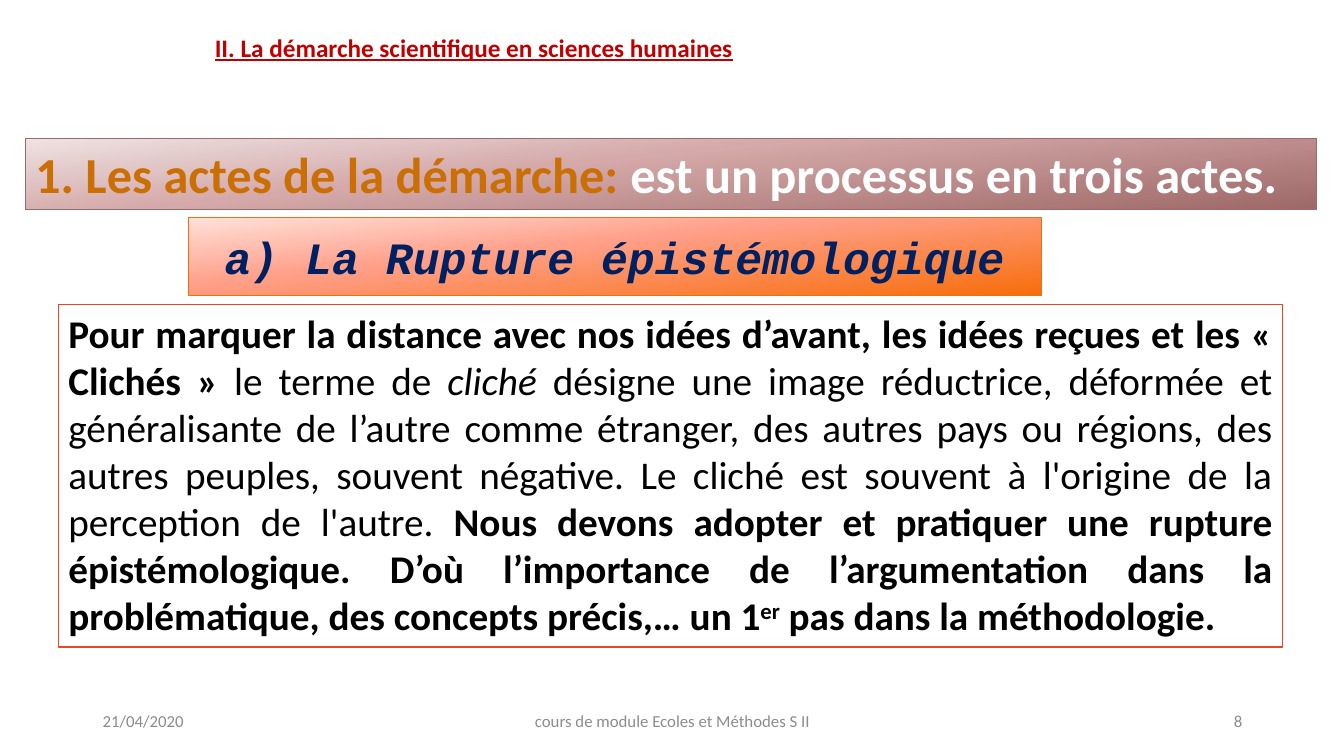
from dataclasses import dataclass

from lxml import etree
from pptx import Presentation
from pptx.dml.color import RGBColor
from pptx.enum.shapes import MSO_SHAPE
from pptx.enum.text import MSO_ANCHOR, MSO_AUTO_SIZE, PP_ALIGN
from pptx.oxml.ns import qn
from pptx.util import Inches, Pt

RECTANGLE = MSO_SHAPE.RECTANGLE
TOP, MIDDLE = MSO_ANCHOR.TOP, MSO_ANCHOR.MIDDLE
LEFT, CENTER, RIGHT, JUSTIFY = PP_ALIGN.LEFT, PP_ALIGN.CENTER, PP_ALIGN.RIGHT, PP_ALIGN.JUSTIFY
GROW, FIXED = MSO_AUTO_SIZE.SHAPE_TO_FIT_TEXT, MSO_AUTO_SIZE.NONE
TITLE_ONLY = 5


@dataclass(frozen=True)
class Theme:
    """Colours, gradients and text formats of the course slides."""

    white: str = "FFFFFF"
    banner_line: str = "9C6A6A"
    act_line: str = "EC7016"
    body_line: str = "E64823"
    banner_fill: tuple = ((0, "EEE3E3"), (40, "D5A9A9"), (100, "9E6868"))
    act_fill: tuple = ((0, "FFE1DA"), (40, "FFA08A"), (100, "F76E0B"))
    gradient_angle: int = 84

    def text(self, role):
        """Return the format values of a text role."""
        return {
            "chapter": {"name": "Calibri", "size": Pt(18), "color": "C00000",
                        "bold": True, "underline": True},
            "footer": {"name": "Calibri", "size": Pt(12), "color": "8C8C8C"},
            "banner": {"name": "Calibri", "size": Pt(36), "color": "CA6F06", "bold": True},
            "act": {"name": "Courier New", "size": Pt(32), "color": "002060",
                    "bold": True, "italic": True},
            "body": {"name": "Calibri", "size": Pt(28), "color": "000000"},
        }[role]


class SlideBuilder:
    """Holds the theme and the current page and adds elements to it."""

    def __init__(self, page, theme):
        """Keep the page and its theme."""
        self.page = page
        self.theme = theme

    def fill_text(self, box, role, spans, align=LEFT, anchor=TOP, wrap=True, size=FIXED):
        """Fill a box with one paragraph of formatted spans."""
        frame = box.text_frame
        layout = {"word_wrap": wrap, "vertical_anchor": anchor, "auto_size": size}
        for name, value in layout.items():
            setattr(frame, name, value)
        para = frame.paragraphs[0]
        para.alignment = align
        for words, changes in spans:
            span = para.add_run()
            span.text = words
            values = {**self.theme.text(role), **changes}
            span.font.color.rgb = RGBColor.from_string(values.pop("color"))
            baseline = values.pop("baseline", None)
            for name, value in values.items():
                setattr(span.font, name, value)
            if baseline:
                span.font._element.set("baseline", str(baseline * 1000))

    def title(self, place, words):
        """Move the title placeholder and put the chapter heading in it."""
        box = self.page.shapes.title
        for name, value in zip(("left", "top", "width", "height"), place):
            setattr(box, name, Inches(value))
        self.fill_text(box, "chapter", [(words, {})], wrap=False, size=GROW)

    def label(self, place, words, align):
        """Add a footer text."""
        box = self.page.shapes.add_textbox(*map(Inches, place))
        self.fill_text(box, "footer", [(words, {})], align, MIDDLE)

    def panel(self, place, fill, line, weight, role, spans, **layout):
        """Add a framed rectangle with a plain or gradient fill and text."""
        box = self.page.shapes.add_shape(RECTANGLE, *map(Inches, place))
        box.shadow.inherit = False
        if isinstance(fill, str):
            box.fill.solid()
            box.fill.fore_color.rgb = RGBColor.from_string(fill)
        else:
            self.gradient(box, fill)
        box.line.color.rgb = RGBColor.from_string(line)
        box.line.width = Pt(weight)
        self.fill_text(box, role, spans, **layout)

    def gradient(self, box, stops):
        """Give a box a linear gradient with the listed stops."""
        box.fill.gradient()
        box.fill.gradient_angle = 360 - self.theme.gradient_angle
        stop_list = box._element.spPr.find(qn("a:gradFill")).find(qn("a:gsLst"))
        for old_stop in list(stop_list):
            stop_list.remove(old_stop)
        for position, color in stops:
            stop = etree.SubElement(stop_list, qn("a:gs"), pos=str(position * 1000))
            etree.SubElement(stop, qn("a:srgbClr"), val=color)


def main():
    """Build the slide on the epistemological break and save it."""
    deck = Presentation()
    deck.slide_width, deck.slide_height = Inches(13.33), Inches(7.5)
    page = deck.slides.add_slide(deck.slide_layouts[TITLE_ONLY])
    theme = Theme()
    builder = SlideBuilder(page, theme)

    builder.title((2.03, 0.27, 5.38, 0.4), "II. La démarche scientifique en sciences humaines")

    footers = (
        (0.92, 3, "21/04/2020", LEFT),
        (4.42, 4.5, "cours de module Ecoles et Méthodes S II", CENTER),
        (9.42, 3, "8", RIGHT),
    )
    for left, width, words, align in footers:
        builder.label((left, 6.95, width, 0.4), words, align)

    builder.panel(
        (0.25, 1.37, 12.81, 0.71), theme.banner_fill, theme.banner_line, 0.75, "banner",
        [("1. Les actes de la démarche: ", {}),
         ("est un processus en trois actes.", {"color": theme.white})],
        size=GROW)

    builder.panel(
        (1.87, 2.16, 8.46, 0.77), theme.act_fill, theme.act_line, 0.75, "act",
        [("a) La Rupture épistémologique", {})],
        align=CENTER, anchor=MIDDLE)

    strong = {"bold": True}
    builder.panel(
        (0.58, 3.02, 12.14, 3.4), theme.white, theme.body_line, 1.25, "body",
        [("Pour marquer la distance avec nos idées d’avant, les idées reçues et les "
          "« Clichés » ", strong),
         ("le terme de ", {}),
         ("cliché", {"italic": True}),
         (" désigne une image réductrice, déformée et généralisante de l’autre comme "
          "étranger, des autres pays ou régions, des autres peuples, souvent négative. "
          "Le cliché est souvent à l'origine de la perception de l'autre. ", {}),
         ("Nous devons adopter et pratiquer une rupture épistémologique. D’où "
          "l’importance de l’argumentation dans la problématique, des concepts "
          "précis,… un 1", strong),
         ("er", {"bold": True, "baseline": 30}),
         (" pas dans la méthodologie.", strong)],
        align=JUSTIFY, size=GROW)

    deck.save("out.pptx")


if __name__ == "__main__":
    main()
